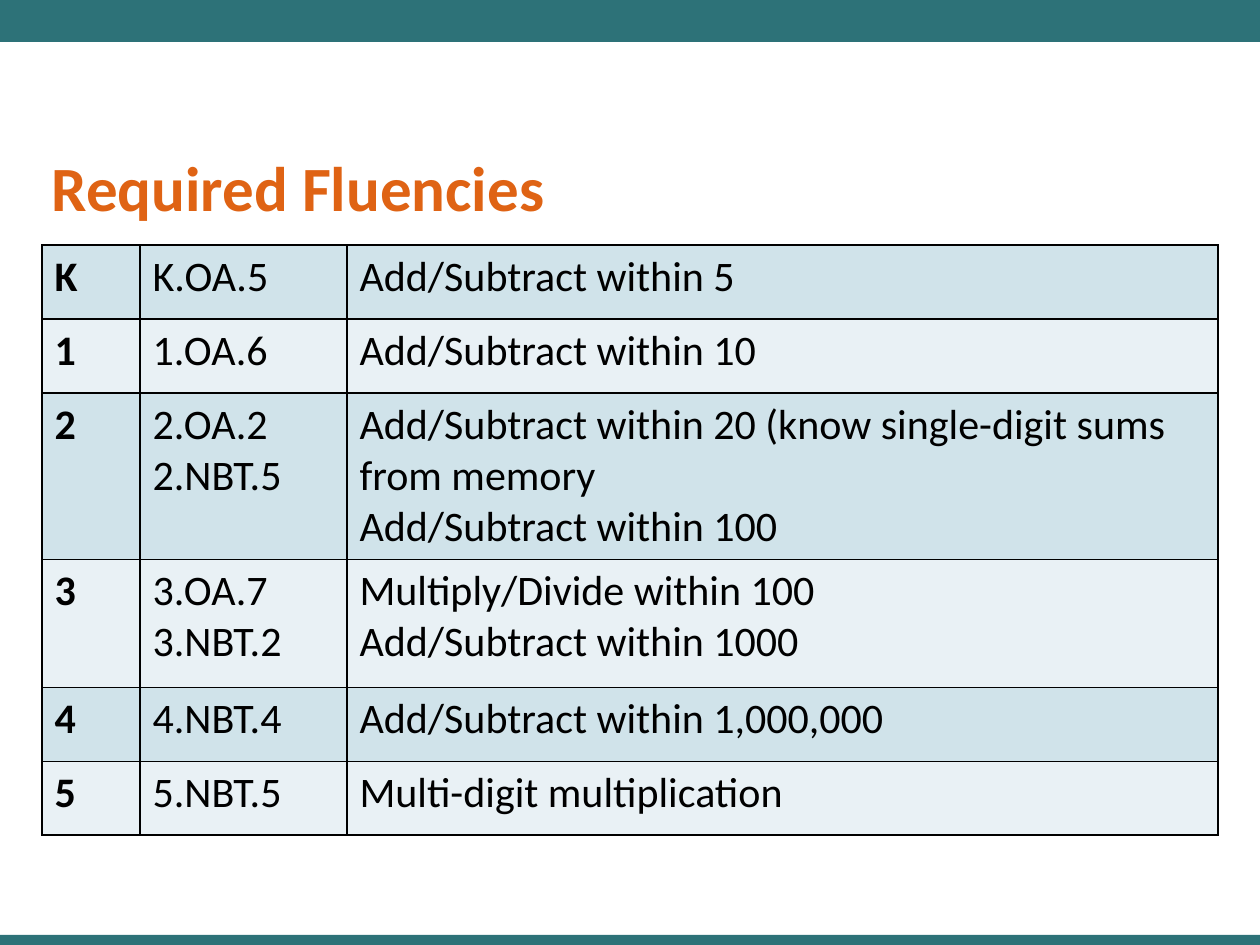
from lxml.etree import SubElement
from pptx import Presentation
from pptx.dml.color import RGBColor
from pptx.enum.shapes import MSO_SHAPE as Shape
from pptx.enum.text import MSO_ANCHOR as Anchor, PP_ALIGN as Align
from pptx.oxml.ns import qn
from pptx.util import Emu, Pt

TEAL, ORANGE, BLACK = "2D7278", "DF6314", "000000"
BANDS = ("D0E3EA", "E9F1F5")

FLUENCIES = [
    ("K", ["K.OA.5"], ["Add/Subtract within 5"]),
    ("1", ["1.OA.6"], ["Add/Subtract within 10"]),
    ("2", ["2.OA.2", "2.NBT.5"],
     ["Add/Subtract within 20 (know single-digit sums from memory", "Add/Subtract within 100"]),
    ("3", ["3.OA.7", "3.NBT.2"], ["Multiply/Divide within 100", "Add/Subtract within 1000"]),
    ("4", ["4.NBT.4"], ["Add/Subtract within 1,000,000"]),
    ("5", ["5.NBT.5"], ["Multi-digit multiplication"]),
]
COLUMN_WIDTHS = (98, 207, 871)
ROW_HEIGHTS = {1: 74, 2: 128}


def px(length):
    return Emu(round(length * 914400 / 126))


def rgb(color):
    return RGBColor.from_string(color)


class SlideBuilder:
    font = "Calibri"

    def __init__(self, slide):
        self.slide = slide

    def add_lines(self, frame, lines, size, color, bold=False):
        for index, line in enumerate(lines):
            paragraph = frame.add_paragraph() if index else frame.paragraphs[0]
            paragraph.alignment = Align.LEFT
            run = paragraph.add_run()
            run.text = line
            run.font.name = self.font
            run.font.size = Pt(size)
            run.font.bold = bold
            run.font.color.rgb = rgb(color)

    def bar(self, left, top, width, height, color):
        bar = self.slide.shapes.add_shape(Shape.RECTANGLE, px(left), px(top), px(width), px(height))
        bar.shadow.inherit = False
        bar.fill.solid()
        bar.fill.fore_color.rgb = rgb(color)
        bar.line.fill.background()

    def title(self, left, top, width, height, wording):
        title = self.slide.shapes.title
        title.left, title.top = px(left), px(top)
        title.width, title.height = px(width), px(height)
        title.text_frame.vertical_anchor = Anchor.BOTTOM
        self.add_lines(title.text_frame, [wording], 36, ORANGE, bold=True)

    def borders(self, cell, color):
        properties = cell._tc.get_or_add_tcPr()
        for side in ("lnL", "lnR", "lnT", "lnB"):
            line = SubElement(properties, qn(f"a:{side}"), w=str(Pt(1)))
            fill = SubElement(line, qn("a:solidFill"))
            SubElement(fill, qn("a:srgbClr"), val=color)

    def table(self, left, top, rows):
        heights = [ROW_HEIGHTS[len(standards)] for _, standards, _ in rows]
        table = self.slide.shapes.add_table(
            len(rows), len(COLUMN_WIDTHS), px(left), px(top),
            px(sum(COLUMN_WIDTHS)), px(sum(heights))).table
        table.first_row = table.horz_banding = False
        for column, width in zip(table.columns, COLUMN_WIDTHS):
            column.width = px(width)
        for index, (grade, standards, skills) in enumerate(rows):
            table.rows[index].height = px(heights[index])
            for position, lines in enumerate(([grade], standards, skills)):
                cell = table.cell(index, position)
                self.borders(cell, BLACK)
                cell.fill.solid()
                cell.fill.fore_color.rgb = rgb(BANDS[index % 2])
                self.add_lines(cell.text_frame, lines, 24, BLACK, bold=position == 0)


def main():
    deck = Presentation()
    deck.slide_width, deck.slide_height = px(1260), px(945)
    builder = SlideBuilder(deck.slides.add_slide(deck.slide_layouts[5]))
    builder.bar(0, 0, 1260, 42, TEAL)
    builder.bar(0, 935, 1260, 21, TEAL)
    builder.title(39, 42, 1134, 188, "Required Fluencies")
    builder.table(42, 245, FLUENCIES)
    deck.save("out.pptx")


if __name__ == "__main__":
    main()
